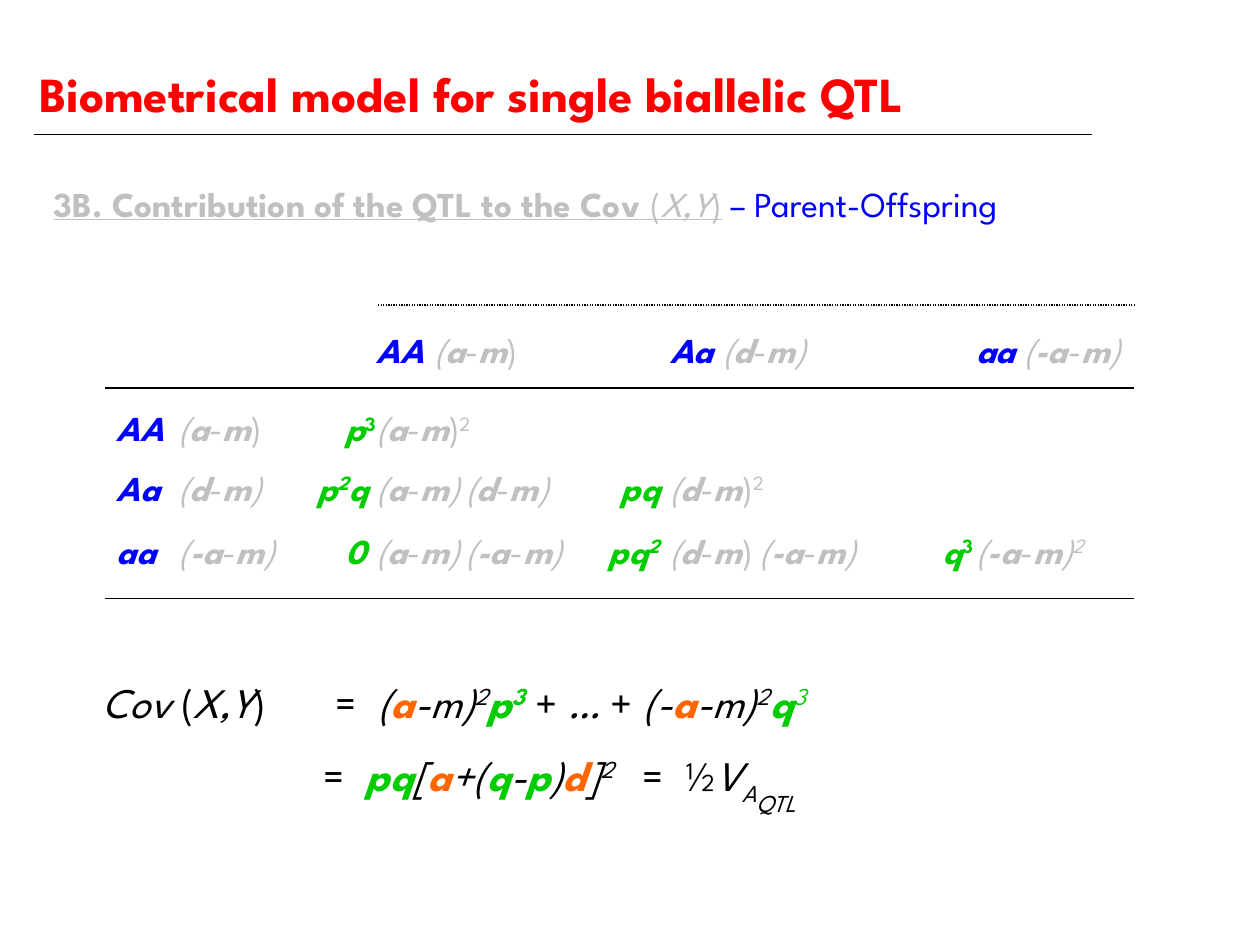
import pptx
import pptx.util
import pptx.dml.color
import pptx.enum.dml
import pptx.enum.shapes
import pptx.enum.text
import pptx.oxml

INK = {"R": "FF0000", "B": "0000FF", "G": "00CC00",
       "S": "C0C0C0", "O": "FF6600", "K": "000000"}
BASE = {"^": "30000", "v": "-25000", "w": "-50000"}
FACE = "League Spartan"

TITLE = [("Biometrical model for single biallelic QTL", "Rb")]
HEAD = [("3B. Contribution of the QTL to the Cov ", "Sbu"), ("(", "Su"),
        ("X,Y", "Siu"), (")", "Su"), (" – Parent-Offspring", "B")]

GENES = [("AA", 0.6, "a", ""), ("Aa", 0.56, "d", "i"), ("aa", 0.54, "-a", "i")]
WIDTH = {"a": 0.88, "d": 0.89, "-a": 0.97}

CELLS = [
    (0, 0, 2.64, 0.47, [("p", "Gbi"), ("3", "Gb^")], [("a", "", "2")]),
    (1, 0, 2.42, 0.64, [("p", "Gbi"), ("2", "Gbi^"), ("q", "Gbi")],
     [("a", "i", ""), ("d", "i", "")]),
    (2, 0, 2.64, 0.36, [("0", "Gbi")], [("a", "i", ""), ("-a", "i", "")]),
    (1, 1, 4.83, 0.54, [("pq", "Gbi")], [("d", "", "2")]),
    (2, 1, 4.73, 0.64, [("pq", "Gbi"), ("2", "Gbi^")],
     [("d", "", ""), ("-a", "i", "")]),
    (2, 2, 7.38, 0.47, [("q", "Gbi"), ("3", "Gb^")], [("-a", "i", "2")]),
]

SUMS = [
    (1.32, 5.32, 6.42, "c", True,
     [("=", "K"), (" ", "K+"), ("(", "Ki"), ("a", "Obi"), ("-m)", "Ki"),
      ("2", "Ki^"), ("p", "Gbi"), ("3", "Gbi^"), (" + ", "K"), ("…", "Ki"),
      (" + ", "K"), ("(-", "Ki"), ("a", "Obi"), ("-m)", "Ki"), ("2", "Ki^"),
      ("q", "Gbi"), ("3", "Gi^")]),
    (0.64, 5.32, 1.65, "c", False,
     [("Cov", "Ki"), (" (", "K"), ("X,Y", "Ki"), (")", "K")]),
    (5, 5.9, 2.22, "l", True,
     [("=", "K"), (" ", "K+"), ("½", "K"), ("V", "Ki"), ("A", "Kiv"),
      ("QTL", "Kiw")]),
    (2.41, 5.9, 2.62, "c", False,
     [("=", "K"), (" ", "K+"), ("pq", "Gbi"), ("[", "Ki"), ("a", "Obi"),
      ("+(", "Ki"), ("q", "Gbi"), ("-", "Ki"), ("p", "Gbi"), (")", "Ki"),
      ("d", "Obi"), ("]", "Ki"), ("2", "Ki^")]),
]

RULES = [(0.27, 8.67, 1.07, False), (3, 9, 2.42, True),
         (0.83, 9, 3.08, False), (0.83, 9, 4.75, False)]

COLS = (2.89, 5.22, 7.65)
ROWS = (3.18, 3.65, 4.15)
TOP = 2.56
LEFT = 0.83
STEP = 0.71
GAPS = (0.46, 0.42, 0.38)

inch = pptx.util.Inches
ALIGN = {"l": pptx.enum.text.PP_ALIGN.LEFT, "c": pptx.enum.text.PP_ALIGN.CENTER}
FIT = pptx.enum.text.MSO_AUTO_SIZE


def tint(name):
    return pptx.dml.color.RGBColor.from_string(name)


def write(para, runs, size):
    for text, style in runs:
        run = para.add_run()
        run.text = text
        font = run.font
        font.name = FACE
        font.size = pptx.util.Pt(size)
        font.color.rgb = tint(INK[style[0]])
        font.bold = "b" in style
        font.italic = "i" in style
        font.underline = "u" in style
        props = run._r.get_or_add_rPr()
        for mark in BASE:
            if mark in style:
                props.set("baseline", BASE[mark])
        if "+" in style:
            props.set("spc", "600")


def put(x, y, w, runs, size=20, side="l", wrap=False):
    box = deck.shapes.add_textbox(inch(x), inch(y), inch(w), inch(size / 60 + 0.1))
    frame = box.text_frame
    frame.word_wrap = wrap
    frame.auto_size = FIT.SHAPE_TO_FIT_TEXT
    para = frame.paragraphs[0]
    para.alignment = ALIGN[side]
    write(para, runs, size)


def term(x, y, core, end, power=""):
    runs = [("(", "Si"), (core, "Sbi"), ("-", "S"), ("m", "Sbi"), (")", "S" + end)]
    if power:
        runs.append((power, "S" + end + "^"))
    put(x, y, WIDTH[core] + 0.1 * len(power), runs)


def rule(x, end, y, dots):
    line = deck.shapes.add_connector(
        pptx.enum.shapes.MSO_CONNECTOR.STRAIGHT, inch(x), inch(y), inch(end), inch(y))
    line.line.color.rgb = tint(INK["K"])
    line.line.width = pptx.util.Pt(0.75)
    if dots:
        line.line.dash_style = pptx.enum.dml.MSO_LINE.ROUND_DOT
    line._element.spPr.append(pptx.oxml.parse_xml(
        '<a:effectLst xmlns:a="http://schemas.openxmlformats.org/drawingml/2006/main"/>'))


show = pptx.Presentation()
show.slide_width, show.slide_height = inch(10), inch(7.5)
deck = show.slides.add_slide(show.slide_layouts[5])

title = deck.shapes.title
title.left, title.top, title.width, title.height = map(inch, (0.21, 0.22, 8.54, 0.8))
frame = title.text_frame
frame.auto_size = FIT.NONE
frame.vertical_anchor = pptx.enum.text.MSO_ANCHOR.TOP
para = frame.paragraphs[0]
para.alignment = ALIGN["l"]
para.line_spacing = 1.5
para.space_before = pptx.util.Pt(14)
write(para, TITLE, 28)

put(0.33, 1.4, 8.4, HEAD)
for args in RULES:
    rule(*args)

for (gene, wide, core, end), col, row, gap in zip(GENES, COLS, ROWS, GAPS):
    for x, y, shift in ((col, TOP, gap), (LEFT, row, 0.49)):
        put(x, y, wide, [(gene, "Bbi")])
        term(x + shift, y, core, end)

for row, col, x, wide, weight, terms in CELLS:
    put(x, ROWS[row], wide, weight)
    for spot, part in enumerate(terms):
        term(COLS[col] + spot * STEP, ROWS[row], *part)

for x, y, wide, side, wrap, runs in SUMS:
    put(x, y, wide, runs, 24, side, wrap)

show.save("out.pptx")
